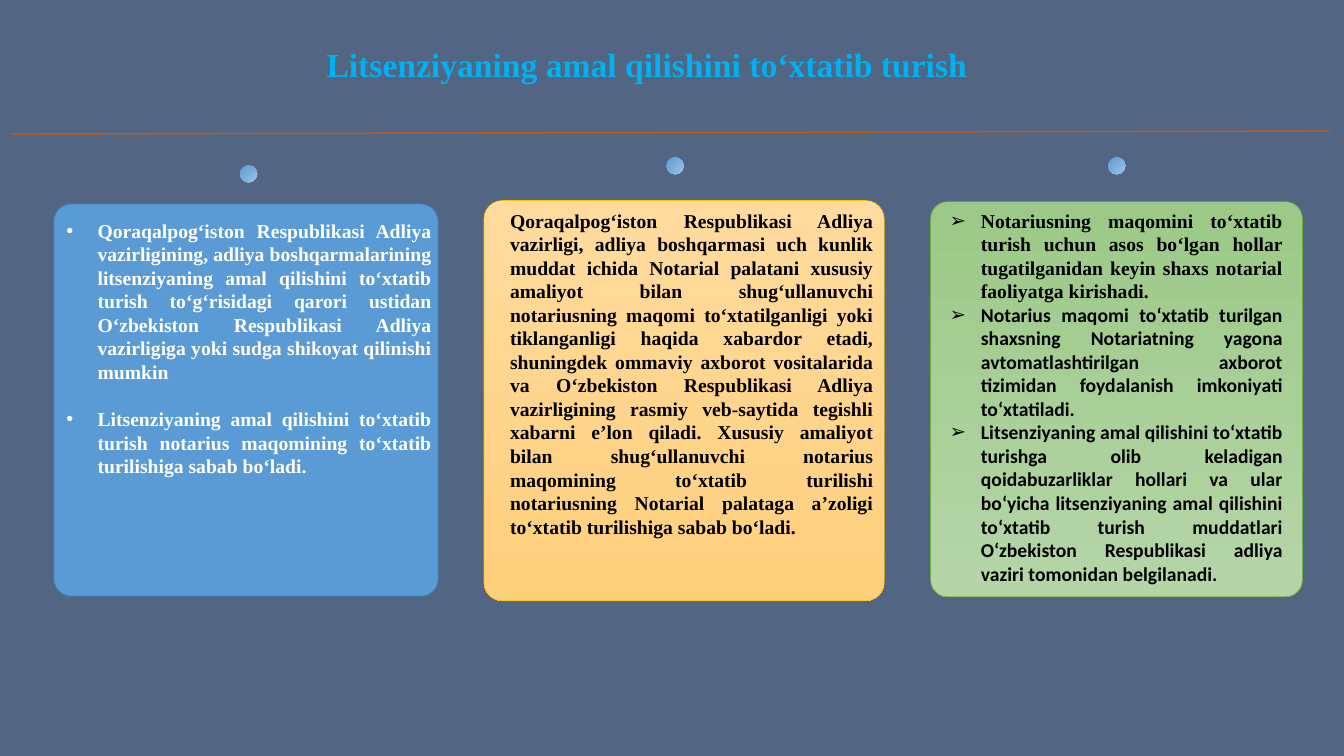
"""Build a slide with three cards on the suspension of a notary's licence."""
from dataclasses import dataclass
from typing import NamedTuple

from lxml import etree
from pptx import Presentation
from pptx import util as u
from pptx.dml.color import RGBColor
from pptx.enum import shapes, text
from pptx.oxml import ns

COLORS = {
    "background": "526582", "title": "00B0F0", "rule": "C55A11",
    "white": "FFFFFF", "black": "000000",
    "blue": "5B9BD5", "blue_light": "9DC3E6", "blue_line": "43739E",
    "yellow_light": "FFDB9E", "yellow": "FFD07C", "yellow_line": "FFC000",
    "green": "9CC987", "green_light": "B5D5A7", "green_line": "70AD47",
}
SERIF, SANS = "Times New Roman", "Calibri"
WIDTH, HEIGHT = u.Inches(13.33), u.Inches(7.5)
DOT_WIDTH, DOT_HEIGHT = 1.28, 2.27
INDENT = u.Inches(0.31)
CORNER = 0.046
DOWN, DIAGONAL = 270, 315


class Box(NamedTuple):
    """Left, top, width and height in percent of the slide."""
    left: float
    top: float
    width: float
    height: float


class Item(NamedTuple):
    """One paragraph of a card."""
    words: str
    font: str = SERIF
    space_before: float = 0


@dataclass
class Card:
    """A rounded panel with its dot and its text."""
    panel: Box
    body: Box
    dot: tuple[float, float]
    fill: tuple[str, ...]
    line: str
    line_width: float
    ink: str
    bullet: str
    items: list[Item]


CARDS = [
    Card(Box(3.98, 26.93, 28.66, 52), Box(4.2, 28.27, 28.66, 35.87), (17.85, 21.87),
         ("blue",), "blue_line", 1, "white", "•", [
        Item("Qoraqalpog‘iston Respublikasi Adliya vazirligining, adliya boshqarmalarining "
             "litsenziyaning amal qilishini to‘xtatib turish to‘g‘risidagi qarori ustidan "
             "O‘zbekiston Respublikasi Adliya vazirligiga yoki sudga shikoyat qilinishi mumkin"),
        Item("Litsenziyaning amal qilishini to‘xtatib turish notarius maqomining to‘xtatib "
             "turilishiga sabab bo‘ladi.", space_before=17)]),
    Card(Box(36.01, 26.53, 29.78, 52.93), Box(37.21, 26.93, 28.51, 45.33), (49.59, 20.8),
         ("yellow_light", "yellow"), "yellow_line", 0.5, "black", "", [
        Item("Qoraqalpog‘iston Respublikasi Adliya vazirligi, adliya boshqarmasi uch kunlik "
             "muddat ichida Notarial palatani xususiy amaliyot bilan shug‘ullanuvchi "
             "notariusning maqomi to‘xtatilganligi yoki tiklanganligi haqida xabardor etadi, "
             "shuningdek ommaviy axborot vositalarida va O‘zbekiston Respublikasi Adliya "
             "vazirligining rasmiy veb-saytida tegishli xabarni e’lon qiladi. Xususiy amaliyot "
             "bilan shug‘ullanuvchi notarius maqomining to‘xtatib turilishi notariusning "
             "Notarial palataga a’zoligi to‘xtatib turilishiga sabab bo‘ladi.")]),
    Card(Box(69.24, 26.67, 27.68, 52.27), Box(69.92, 26.93, 26.26, 51.6), (82.45, 20.8),
         ("green", "green_light"), "green_line", 0.5, "black", "➢", [
        Item("Notariusning maqomini to‘xtatib turish uchun asos bo‘lgan hollar tugatilganidan "
             "keyin shaxs notarial faoliyatga kirishadi."),
        Item("Notarius maqomi to‘xtatib turilgan shaxsning Notariatning yagona "
             "avtomatlashtirilgan axborot tizimidan foydalanish imkoniyati to‘xtatiladi.", SANS),
        Item("Litsenziyaning amal qilishini to‘xtatib turishga olib keladigan qoidabuzarliklar "
             "hollari va ular bo‘yicha litsenziyaning amal qilishini to‘xtatib turish muddatlari "
             "O‘zbekiston Respublikasi adliya vaziri tomonidan belgilanadi.", SANS)]),
]


def color(name: str) -> RGBColor:
    return RGBColor.from_string(COLORS[name])


def across(percent: float) -> int:
    return round(WIDTH * percent / 100)


def down(percent: float) -> int:
    return round(HEIGHT * percent / 100)


def place(box: Box) -> tuple[int, int, int, int]:
    return across(box.left), down(box.top), across(box.width), down(box.height)


def style(paragraph, font: str, size: float, ink: str, alignment) -> None:
    paragraph.alignment = alignment
    paragraph.font.name = font
    paragraph.font.size = u.Pt(size)
    paragraph.font.bold = True
    paragraph.font.color.rgb = color(ink)


def add_bullet(paragraph, symbol: str) -> None:
    properties = paragraph._p.get_or_add_pPr()
    properties.set("marL", str(INDENT))
    properties.set("indent", str(-INDENT))
    etree.SubElement(properties, ns.qn("a:buFont"), typeface="Arial")
    etree.SubElement(properties, ns.qn("a:buChar"), char=symbol)


def add_filled(slide, kind, box: Box, fill: tuple[str, ...], angle: float):
    shape = slide.shapes.add_shape(kind, *place(box))
    shape.shadow.inherit = False
    if len(fill) == 1:
        shape.fill.solid()
        shape.fill.fore_color.rgb = color(fill[0])
    else:
        shape.fill.gradient()
        shape.fill.gradient_angle = angle
        for stop, name in zip(shape.fill.gradient_stops, fill):
            stop.color.rgb = color(name)
    return shape


def add_title(slide) -> None:
    title = slide.shapes.title
    title.left, title.top, title.width, title.height = place(Box(20.33, 5.2, 55.59, 6.67))
    frame = title.text_frame
    frame.text = "Litsenziyaning amal qilishini to‘xtatib turish"
    frame.auto_size = text.MSO_AUTO_SIZE.NONE
    frame.vertical_anchor = text.MSO_ANCHOR.TOP
    style(frame.paragraphs[0], SERIF, 24, "title", text.PP_ALIGN.CENTER)


def add_rule(slide) -> None:
    rule = slide.shapes.add_connector(
        shapes.MSO_CONNECTOR.STRAIGHT, across(0.9), down(17.73), across(98.95), down(17.33))
    rule.line.color.rgb = color("rule")
    rule.line.width = u.Pt(1)
    etree.SubElement(rule._element.spPr, ns.qn("a:effectLst"))


def add_card(slide, card: Card) -> None:
    panel = add_filled(slide, shapes.MSO_SHAPE.ROUNDED_RECTANGLE, card.panel, card.fill, DOWN)
    panel.adjustments[0] = CORNER
    panel.line.color.rgb = color(card.line)
    panel.line.width = u.Pt(card.line_width)
    dot = add_filled(slide, shapes.MSO_SHAPE.OVAL, Box(*card.dot, DOT_WIDTH, DOT_HEIGHT),
                     ("blue", "blue_light"), DIAGONAL)
    dot.line.fill.background()
    frame = slide.shapes.add_textbox(*place(card.body)).text_frame
    frame.word_wrap = True
    for index, item in enumerate(card.items):
        paragraph = frame.add_paragraph() if index else frame.paragraphs[0]
        paragraph.text = item.words
        if card.bullet:
            add_bullet(paragraph, card.bullet)
        paragraph.space_before = u.Pt(item.space_before)
        style(paragraph, item.font, 14, card.ink, text.PP_ALIGN.JUSTIFY)


def main() -> None:
    presentation = Presentation()
    presentation.slide_width, presentation.slide_height = WIDTH, HEIGHT
    slide = presentation.slides.add_slide(presentation.slide_layouts[5])
    slide.background.fill.solid()
    slide.background.fill.fore_color.rgb = color("background")
    add_title(slide)
    add_rule(slide)
    for card in CARDS:
        add_card(slide, card)
    presentation.save("out.pptx")


if __name__ == "__main__":
    main()
